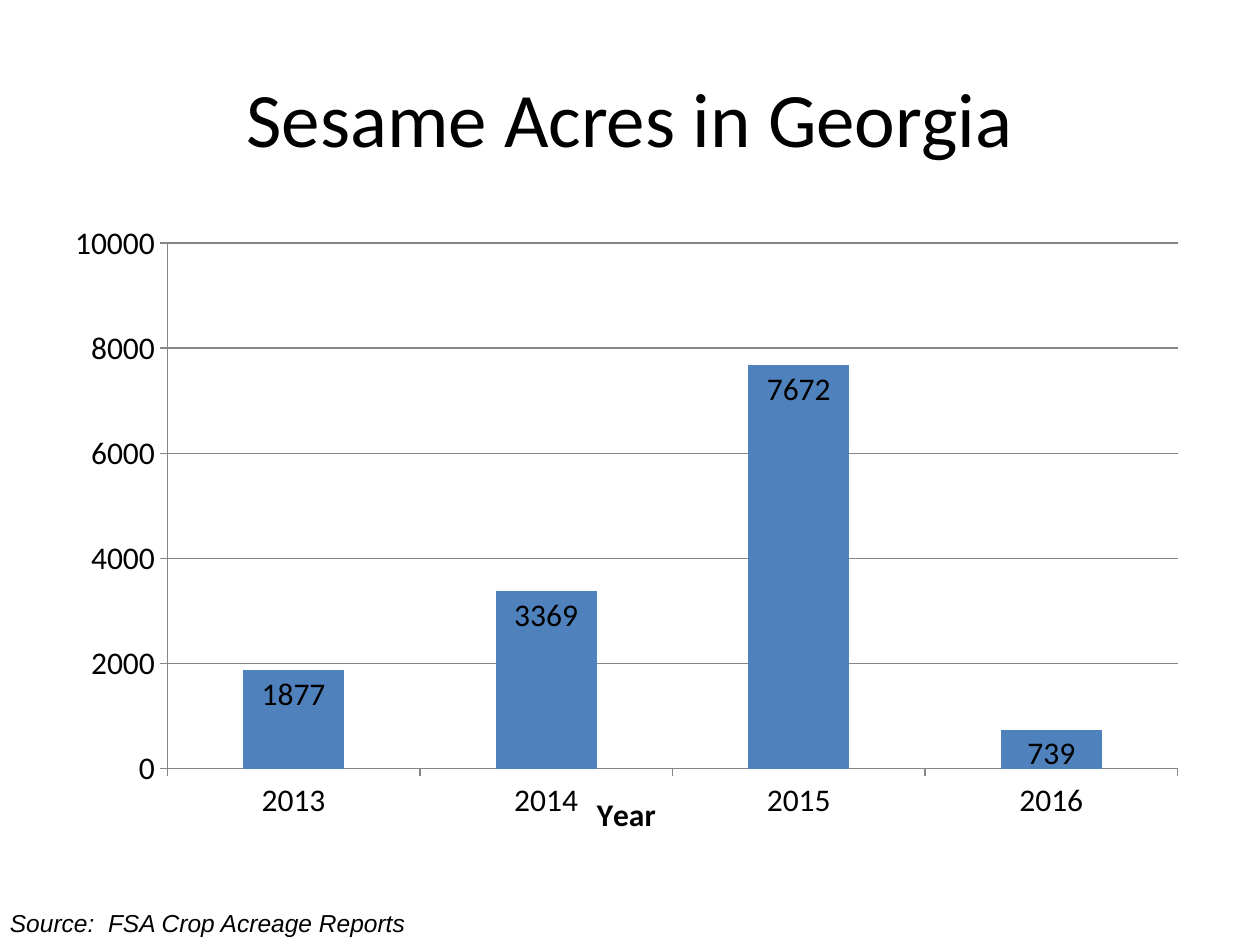
from lxml import etree
from pptx import Presentation
from pptx.chart.data import CategoryChartData
from pptx.dml.color import RGBColor
from pptx.enum.chart import XL_CHART_TYPE, XL_LABEL_POSITION, XL_TICK_MARK
from pptx.enum.text import MSO_ANCHOR, MSO_AUTO_SIZE, PP_ALIGN
from pptx.oxml.ns import qn
from pptx.util import Pt

COLUMN = XL_CHART_TYPE.COLUMN_CLUSTERED
IN_END = XL_LABEL_POSITION.INSIDE_END
OUT, NO_TICK = XL_TICK_MARK.OUTSIDE, XL_TICK_MARK.NONE
MIDDLE, TOP = MSO_ANCHOR.MIDDLE, MSO_ANCHOR.TOP
CENTER, LEFT = PP_ALIGN.CENTER, PP_ALIGN.LEFT
FIT = MSO_AUTO_SIZE.SHAPE_TO_FIT_TEXT


def color(code):
    return RGBColor.from_string(code)


class Deck:
    ink, bar, rule = "000000", "4F81BD", "868686"
    face, note = "Calibri", "Arial"

    def __init__(self, wide, high):
        self.prs = Presentation()
        self.prs.slide_width, self.prs.slide_height = Pt(wide), Pt(high)
        self.slide = self.prs.slides.add_slide(self.prs.slide_layouts[6])

    def style(self, font, size, face, bold=False, italic=False):
        font.name, font.size = face, Pt(size)
        font.bold, font.italic = bold, italic
        font.color.rgb = color(self.ink)

    def text(self, box, words, size, face, align=LEFT, anchor=TOP,
             wrap=True, italic=False):
        shape = self.slide.shapes.add_textbox(*map(Pt, box))
        frame = shape.text_frame
        frame.word_wrap, frame.vertical_anchor = wrap, anchor
        if not wrap:
            frame.auto_size = FIT
        para = frame.paragraphs[0]
        para.alignment = align
        run = para.add_run()
        run.text = words
        self.style(run.font, size, face, italic=italic)

    def place(self, chart, box):
        """Fix the inner plot area, as fractions of the chart."""
        area = chart.plots[0]._element.getparent()
        for old in area.findall(qn("c:layout")):
            area.remove(old)
        layout = etree.Element(qn("c:layout"))
        manual = etree.SubElement(layout, qn("c:manualLayout"))
        parts = [("layoutTarget", "inner"), ("xMode", "edge"), ("yMode", "edge")]
        for tag, val in parts + list(zip("xywh", box)):
            etree.SubElement(manual, qn("c:" + tag)).set("val", str(val))
        area.insert(0, layout)

    def axis(self, axis):
        axis.major_tick_mark, axis.minor_tick_mark = OUT, NO_TICK
        axis.format.line.color.rgb = color(self.rule)

    def chart(self, box, plot_box, cats, name, vals, title, top, step):
        data = CategoryChartData()
        data.categories = cats
        data.add_series(name, vals)
        chart = self.slide.shapes.add_chart(COLUMN, *map(Pt, box), data).chart
        chart.has_legend = chart.has_title = False
        self.style(chart.font, 18, self.face)
        self.place(chart, plot_box)

        # Axes and grid
        cat, val = chart.category_axis, chart.value_axis
        self.axis(cat)
        self.axis(val)
        val.minimum_scale, val.maximum_scale, val.major_unit = 0, top, step
        val.has_major_gridlines = True
        val.major_gridlines.format.line.color.rgb = color(self.rule)
        run = cat.axis_title.text_frame.paragraphs[0].add_run()
        run.text = title
        self.style(run.font, 18, self.face, bold=True)

        # Bars and values
        plot = chart.plots[0]
        plot.gap_width, plot.vary_by_categories = 150, False
        fill = plot.series[0].format.fill
        fill.solid()
        fill.fore_color.rgb = color(self.bar)
        labels = plot.series[0].data_labels
        labels.show_value, labels.position = True, IN_END
        self.style(labels.font, 18, self.face)


def main():
    deck = Deck(720, 540)

    # Title
    deck.text((36, 21.6, 648, 90), "Sesame Acres in Georgia", 44, deck.face,
              align=CENTER, anchor=MIDDLE)

    # Acres by year
    deck.chart((36, 126, 648, 356.4), (0.092, 0.036, 0.891, 0.843),
               ["2013", "2014", "2015", "2016"], "Series 1",
               [1877, 3369, 7672, 739], "Year", 10000, 2000)

    # Source line
    deck.text((-1.44, 515.5, 242, 24.5), "Source:  FSA Crop Acreage Reports",
              14, deck.note, wrap=False, italic=True)

    deck.prs.save("out.pptx")


if __name__ == "__main__":
    main()
